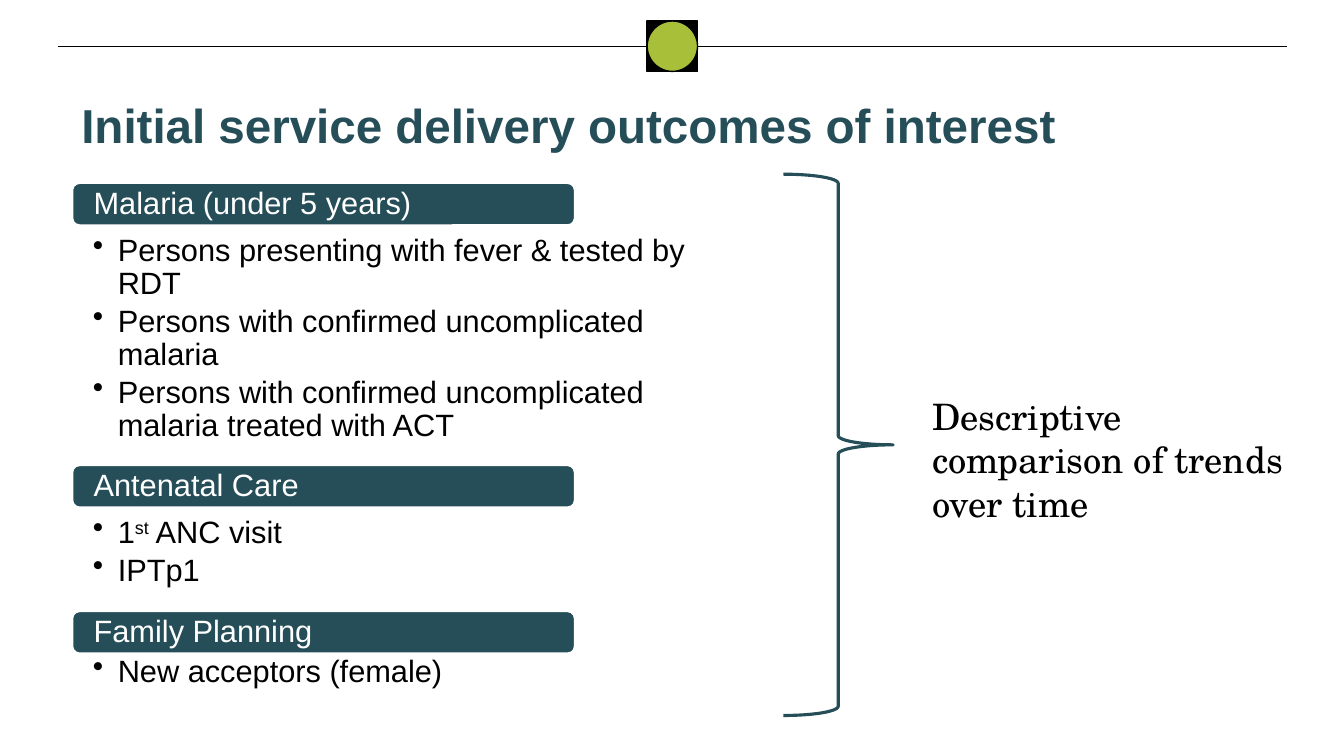
from pptx import Presentation
from pptx.dml.color import RGBColor
from pptx.enum import shapes, text
from pptx.oxml.ns import qn
from pptx.util import Cm, Pt

TITLE = "Initial service delivery outcomes of interest"
NOTE = "Descriptive comparison of trends over time"
# Heading, list height in cm, items; text between ^ marks is superscript
GROUPS = [
    ("Malaria (under 5 years)", 6.38, [
        "Persons presenting with fever & tested by RDT",
        "Persons with confirmed uncomplicated malaria",
        "Persons with confirmed uncomplicated malaria treated with ACT"]),
    ("Antenatal Care", 2.95, ["1^st^ ANC visit", "IPTp1"]),
    ("Family Planning", 1.98, ["New acceptors (female)"]),
]

TEAL = RGBColor(0x26, 0x4E, 0x59)
GREEN = RGBColor(0xA7, 0xBF, 0x39)
BLACK = RGBColor(0, 0, 0)
WHITE = RGBColor(255, 255, 255)

BAR_X, BAR_Y, BAR_W, BAR_H = 1.83, 4.62, 12.65, 1.05
LIST_X, LIST_W = 0.94, 18.06
DROP, GAP = 0.53, 0.2  # bar top to list top, list end to next bar

KIND = shapes.MSO_SHAPE
MID, TOP = text.MSO_ANCHOR.MIDDLE, text.MSO_ANCHOR.TOP


def write(shape, lines, size=22, color=BLACK, font="Arial", bold=False,
          inset=(0.25, 0.13, 0.25, 0.13), anchor=TOP, space=1.0, after=0,
          bullet=False):
    frame = shape.text_frame
    frame.word_wrap = True
    frame.vertical_anchor = anchor
    (frame.margin_left, frame.margin_top,
     frame.margin_right, frame.margin_bottom) = map(Cm, inset)
    for i, line in enumerate(lines):
        para = frame.add_paragraph() if i else frame.paragraphs[0]
        para.alignment = text.PP_ALIGN.LEFT
        para.line_spacing = space
        para.space_after = Pt(after)
        if bullet:
            props = para._p.get_or_add_pPr()
            props.set("marL", str(Cm(0.63)))
            props.set("indent", str(Cm(-0.63)))
            mark = props.makeelement(qn("a:buChar"), {"char": "•"})
            props.append(mark)
        for j, part in enumerate(line.split("^")):
            run = para.add_run()
            run.text = part
            run.font.size = Pt(size)
            run.font.name = font
            run.font.bold = bold
            run.font.color.rgb = color
            if j % 2:
                run._r.get_or_add_rPr().set("baseline", "30000")


def draw(kind, box, fill, line, width=1):
    shape = slide.shapes.add_shape(kind, *map(Cm, box))
    shape.shadow.inherit = False
    if fill is None:
        shape.fill.background()
    else:
        shape.fill.solid()
        shape.fill.fore_color.rgb = fill
    shape.line.color.rgb = line
    shape.line.width = Pt(width)
    return shape


def textbox(box):
    return slide.shapes.add_textbox(*map(Cm, box))


deck = Presentation()
deck.slide_width, deck.slide_height = Cm(33.87), Cm(19.05)
slide = deck.slides.add_slide(deck.slide_layouts[6])

rule = slide.shapes.add_connector(
    shapes.MSO_CONNECTOR.STRAIGHT, Cm(1.45), Cm(1.17), Cm(32.44), Cm(1.17))
rule.line.color.rgb = BLACK
rule.line.width = Pt(0.75)
props = rule._element.spPr
props.append(props.makeelement(qn("a:effectLst"), {}))

badge = (16.31, 0.53, 1.27, 1.27)
draw(KIND.RECTANGLE, badge, BLACK, BLACK)
draw(KIND.OVAL, badge, GREEN, BLACK)

write(textbox((1.8, 2.18, 25.3, 2.31)), [TITLE], size=34, color=TEAL,
      bold=True, inset=(0.25, 0.25, 0.25, 0.13))

y = BAR_Y
for head, height, items in GROUPS:
    bar = draw(KIND.ROUNDED_RECTANGLE, (BAR_X, y, BAR_W, BAR_H), TEAL, WHITE)
    write(bar, [head], color=WHITE, inset=(0.48, 0, 0.48, 0),
          anchor=MID, space=0.9)
    y += DROP
    write(textbox((LIST_X, y, LIST_W, height)), items,
          inset=(1.4, 0.76, 1.4, 0.43), space=0.9, after=3.3, bullet=True)
    y += height + GAP

draw(KIND.RIGHT_BRACE, (19.74, 4.39, 2.77, 13.64), None, TEAL, 2.25)
write(textbox((23.24, 7.44, 10.13, 8.26)), [NOTE], size=26,
      font="TeX Gyre Schola", anchor=MID)

deck.save("out.pptx")
